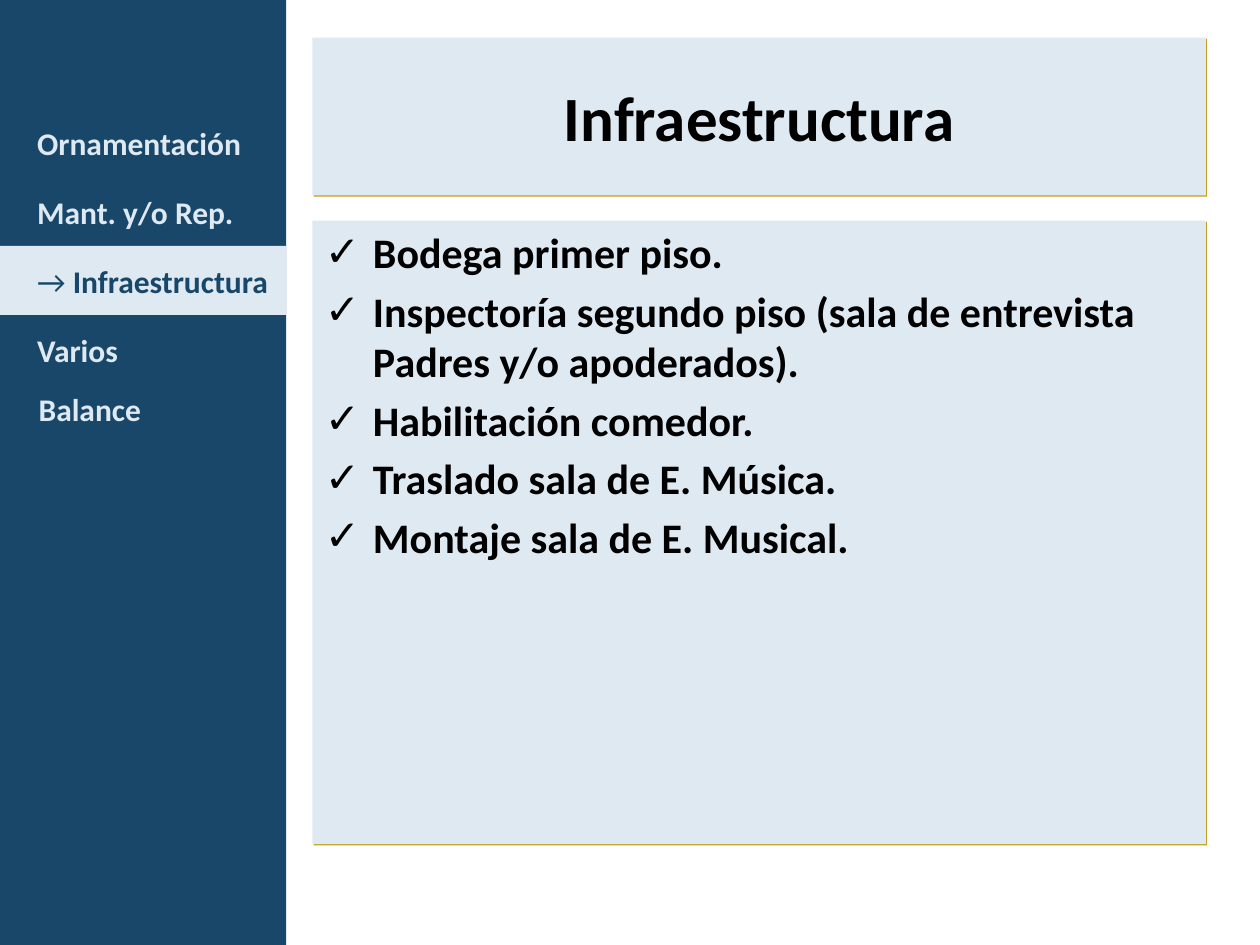
from dataclasses import dataclass

from lxml import etree
from pptx import Presentation
from pptx import util as u
from pptx.dml import color
from pptx.enum import shapes, text
from pptx.oxml import ns

COLORS = {"navy": "184769", "pale": "DEE9F2", "gold": "C39F1B", "black": "000000"}
FONT = "Calibri"
SIDEBAR_WIDTH = 5.77
ROW_HEIGHT = 1.39
HANGING = 0.97


@dataclass(frozen=True)
class Area:
    left: float
    top: float
    width: float
    height: float


@dataclass(frozen=True)
class MenuEntry:
    label: str
    top: float
    left: float = 0
    current: bool = False


MENU_TOP = 2.18
MENU = [
    MenuEntry("Ornamentación", MENU_TOP),
    MenuEntry("Mant. y/o Rep.", MENU_TOP + ROW_HEIGHT),
    MenuEntry("Infraestructura", MENU_TOP + 2 * ROW_HEIGHT, current=True),
    MenuEntry("Varios", MENU_TOP + 3 * ROW_HEIGHT),
    MenuEntry("Balance", 7.54, left=0.03),
]
TITLE_AREA = Area(6.3, 0.76, 18.01, 3.18)
WORKS_AREA = Area(6.3, 4.45, 18.01, 12.57)
WORKS = [
    "Bodega primer piso.",
    "Inspectoría segundo piso (sala de entrevista Padres y/o apoderados).",
    "Habilitación comedor.",
    "Traslado sala de E. Música.",
    "Montaje sala de E. Musical.",
]


def rgb(name: str) -> color.RGBColor:
    return color.RGBColor.from_string(COLORS[name])


def add_block(slide, area: Area, fill: str | None = None):
    bounds = [u.Cm(n) for n in (area.left, area.top, area.width, area.height)]
    if fill is None:
        block = slide.shapes.add_textbox(*bounds)
    else:
        block = slide.shapes.add_shape(shapes.MSO_SHAPE.RECTANGLE, *bounds)
        block.fill.solid()
        block.fill.fore_color.rgb = rgb(fill)
        block.line.fill.background()
        block.shadow.inherit = False
    block.text_frame.word_wrap = True
    return block


def add_run(paragraph, words: str, size: float, ink: str, bold: bool = True) -> None:
    run = paragraph.add_run()
    run.text = words
    run.font.name = FONT
    run.font.size = u.Pt(size)
    run.font.bold = bold
    run.font.color.rgb = rgb(ink)


def set_indent(paragraph, margin: float, first: float = 0):
    properties = paragraph._p.get_or_add_pPr()
    properties.set("marL", str(u.Cm(margin)))
    properties.set("indent", str(u.Cm(first)))
    return properties


def add_panel(slide, area: Area):
    panel = add_block(slide, area, "pale")
    effects = panel.element.spPr.find(ns.qn("a:effectLst"))
    shadow = etree.SubElement(
        effects, ns.qn("a:outerShdw"), blurRad="0", dist=str(u.Pt(1)),
        dir=str(50 * 60000), algn="ctr", rotWithShape="0",
    )
    etree.SubElement(shadow, ns.qn("a:srgbClr"), val=COLORS["gold"])
    return panel


def add_title(slide, words: str) -> None:
    frame = add_panel(slide, TITLE_AREA).text_frame
    frame.vertical_anchor = text.MSO_ANCHOR.MIDDLE
    heading = frame.paragraphs[0]
    heading.alignment = text.PP_ALIGN.CENTER
    add_run(heading, words, 36, "black")


def add_checklist(slide, works: list[str]) -> None:
    frame = add_panel(slide, WORKS_AREA).text_frame
    frame.vertical_anchor = text.MSO_ANCHOR.TOP
    for index, work in enumerate(works):
        item = frame.add_paragraph() if index else frame.paragraphs[0]
        item.alignment = text.PP_ALIGN.LEFT
        if index:
            item.space_before = u.Pt(4.6)
        properties = set_indent(item, HANGING, -HANGING)
        etree.SubElement(properties, ns.qn("a:buFont"), typeface=FONT)
        etree.SubElement(properties, ns.qn("a:buChar"), char="✓")
        add_run(item, work, 24, "black")


def add_menu_entry(slide, entry: MenuEntry) -> None:
    area = Area(entry.left, entry.top, SIDEBAR_WIDTH, ROW_HEIGHT)
    frame = add_block(slide, area, "pale" if entry.current else None).text_frame
    frame.vertical_anchor = text.MSO_ANCHOR.MIDDLE
    label = frame.paragraphs[0]
    label.alignment = text.PP_ALIGN.LEFT
    set_indent(label, 0.5)
    ink = "navy" if entry.current else "pale"
    if entry.current:
        add_run(label, "→ ", 18, ink, bold=False)
    add_run(label, entry.label, 18, ink)


def main() -> None:
    deck = Presentation()
    deck.slide_width, deck.slide_height = u.Cm(25.4), u.Cm(19.05)
    slide = deck.slides.add_slide(deck.slide_layouts[6])
    add_block(slide, Area(0, 0, SIDEBAR_WIDTH, 19.05), "navy")
    add_title(slide, "Infraestructura")
    add_checklist(slide, WORKS)
    for entry in MENU:
        add_menu_entry(slide, entry)
    deck.save("out.pptx")


if __name__ == "__main__":
    main()
